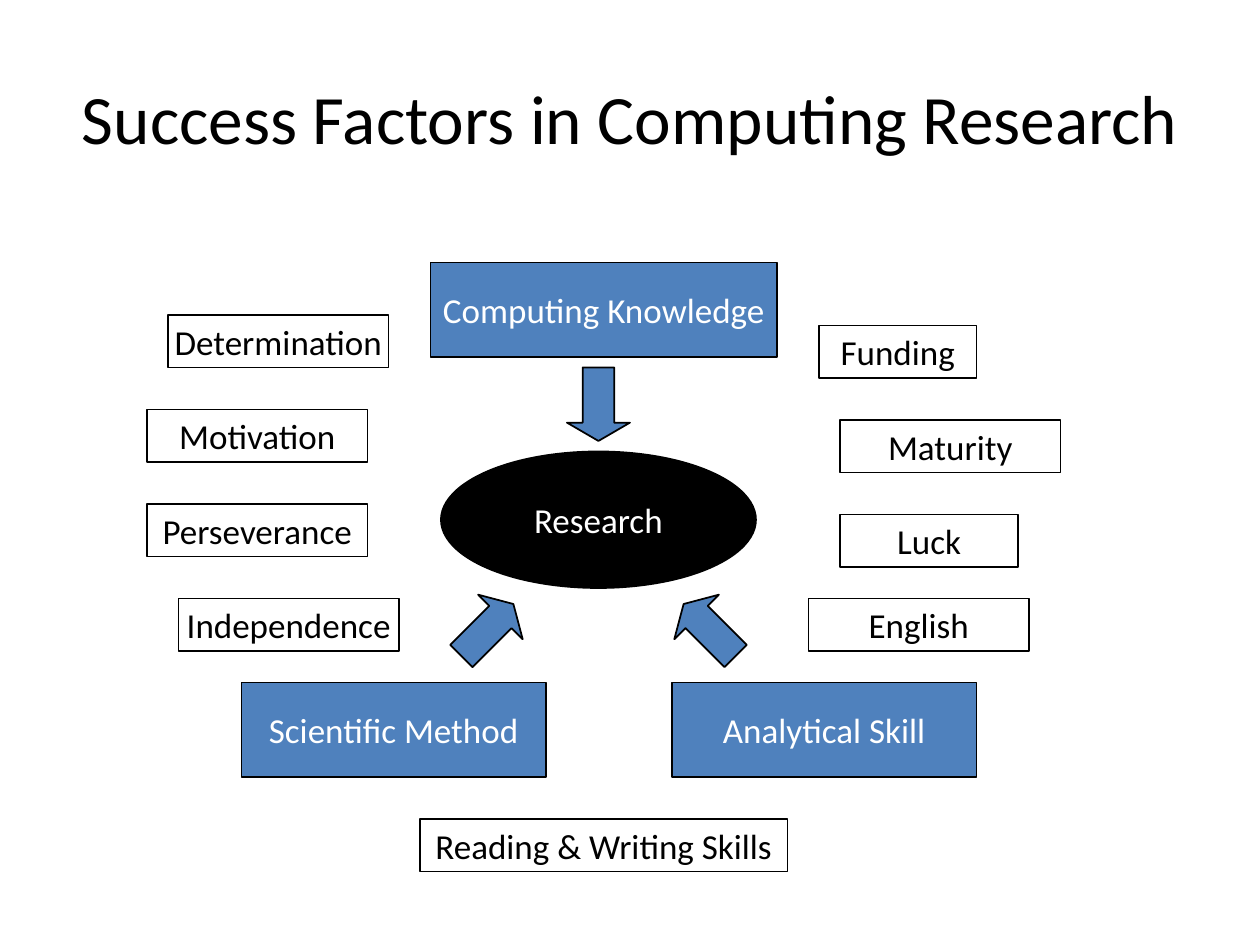
from pptx import Presentation
from pptx.dml.color import RGBColor
from pptx.enum.shapes import MSO_SHAPE as Shape
from pptx.enum.text import MSO_ANCHOR as Anchor, PP_ALIGN as Align
from pptx.util import Pt

BLACK, WHITE, BLUE = "000000", "FFFFFF", "4F81BD"


def color(hex_string):
    return RGBColor.from_string(hex_string)


class Diagram:
    font_name = "Calibri"
    text_size = 20
    title_size = 39.6
    line_width = 1

    def __init__(self, slide):
        self.slide = slide

    def label(self, shape, text, size, text_color, wrap=False):
        frame = shape.text_frame
        frame.word_wrap = wrap
        frame.vertical_anchor = Anchor.MIDDLE
        paragraph = frame.paragraphs[0]
        paragraph.text = text
        paragraph.alignment = Align.CENTER
        paragraph.font.name = self.font_name
        paragraph.font.size = Pt(size)
        paragraph.font.color.rgb = color(text_color)

    def title(self, text, left, top, width, height):
        box = self.slide.shapes.add_textbox(Pt(left), Pt(top), Pt(width), Pt(height))
        self.label(box, text, self.title_size, BLACK, wrap=True)

    def shape(self, kind, left, top, width, height, fill=None, parent=None):
        shapes = (parent or self.slide).shapes
        shape = shapes.add_shape(kind, Pt(left), Pt(top), Pt(width), Pt(height))
        shape.shadow.inherit = False
        if fill:
            shape.fill.solid()
            shape.fill.fore_color.rgb = color(fill)
        else:
            shape.fill.background()
        shape.line.color.rgb = color(BLACK)
        shape.line.width = Pt(self.line_width)
        return shape

    def core(self, text, left, top, width, height):
        ellipse = self.shape(Shape.OVAL, left, top, width, height, BLACK)
        self.label(ellipse, text, self.text_size, WHITE)

    def main_factor(self, text, left, top, width, arrow_left, arrow_top, rotation):
        group = self.slide.shapes.add_group_shape()
        box = self.shape(Shape.RECTANGLE, left, top, width, 54, BLUE, group)
        self.label(box, text, self.text_size, WHITE)
        arrow = self.shape(Shape.DOWN_ARROW, arrow_left, arrow_top, 36, 42, BLUE, group)
        arrow.adjustments[0] = 0.5
        arrow.adjustments[1] = 0.29
        arrow.rotation = rotation

    def side_factor(self, text, left, top, width):
        box = self.shape(Shape.RECTANGLE, left, top, width, 30)
        self.label(box, text, self.text_size, BLACK)


def main():
    presentation = Presentation()
    presentation.slide_width, presentation.slide_height = Pt(720), Pt(540)
    diagram = Diagram(presentation.slides.add_slide(presentation.slide_layouts[6]))

    # Title and centre
    diagram.title("Success Factors in Computing Research", 36, 21.6, 648, 90)
    diagram.core("Research", 252, 258, 180, 78)

    # Main factors, each grouped with its arrow
    for factor in (
        ("Computing Knowledge", 246, 150, 198, 324, 210, 0),
        ("Scientific Method", 138, 390, 174, 260.5, 339, 225),
        ("Analytical Skill", 384, 390, 174, 387.5, 339, 135),
    ):
        diagram.main_factor(*factor)

    # Supporting factors: text, left, top, width
    for factor in (
        ("Funding", 468, 186, 90),
        ("Determination", 96, 180, 126),
        ("Motivation", 84, 234, 126),
        ("Maturity", 480, 240, 126),
        ("Independence", 102, 342, 126),
        ("Luck", 480, 294, 102),
        ("English", 462, 342, 126),
        ("Reading & Writing Skills", 240, 468, 210),
        ("Perseverance", 84, 288, 126),
    ):
        diagram.side_factor(*factor)

    presentation.save("out.pptx")


if __name__ == "__main__":
    main()
